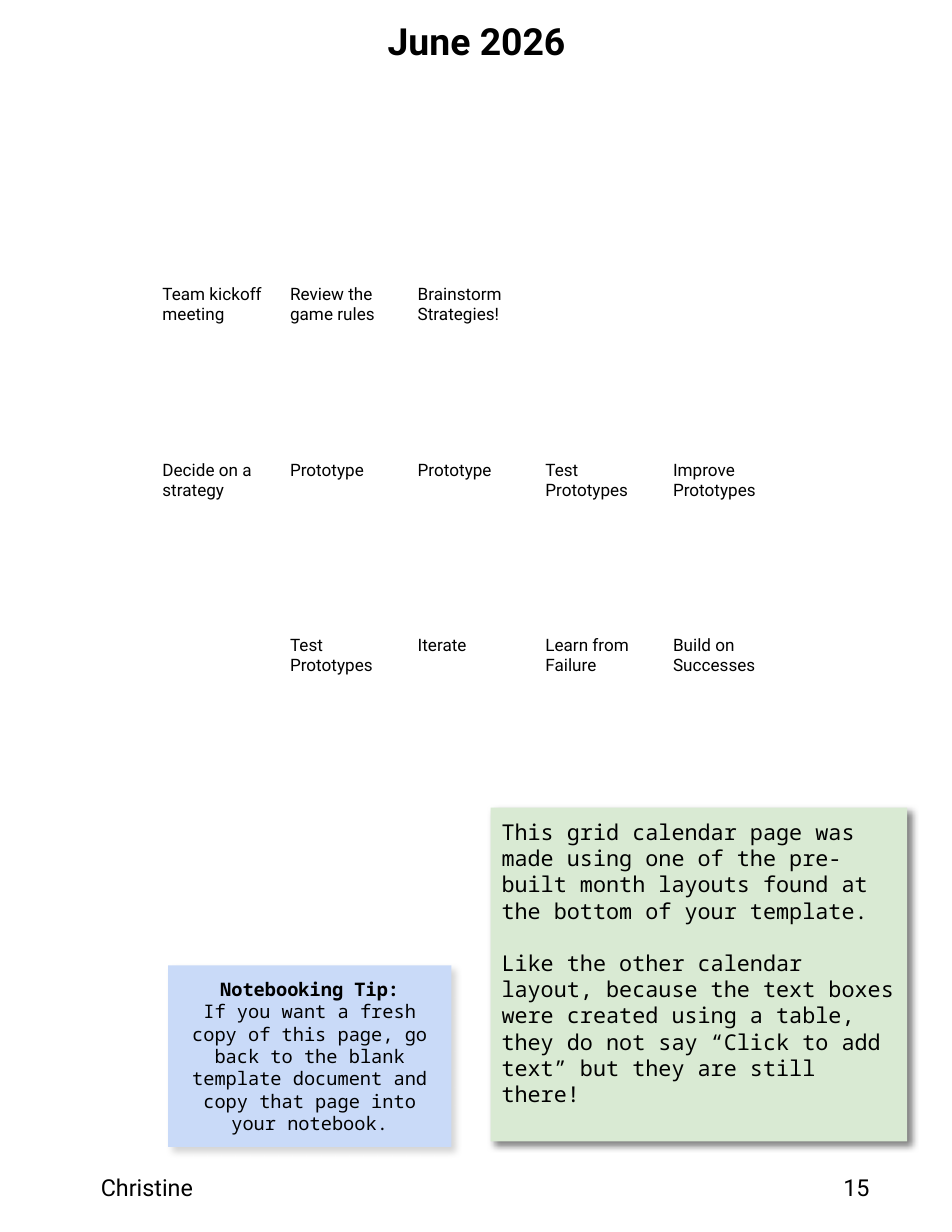
from dataclasses import dataclass
from typing import NamedTuple

from lxml import etree
from pptx import Presentation
from pptx import util as u
from pptx.dml.color import RGBColor
from pptx.enum import shapes, text
from pptx.oxml.ns import qn


@dataclass(frozen=True)
class Theme:
    ink: str = "000000"
    green: str = "D9EAD3"
    blue: str = "C9DAF8"
    sans: str = "Roboto"
    mono: str = "Noto Sans Mono"
    title: float = 24
    footer: float = 15
    entry: float = 11
    note: float = 14
    tip: float = 12


THEME = Theme()
WIDTH, HEIGHT = u.Inches(8.5), u.Inches(11)


class Area(NamedTuple):
    """Percentages of the slide's width and height."""
    left: float
    top: float
    width: float
    height: float

    def lengths(self) -> tuple:
        return (across(self.left), down(self.top),
                across(self.width), down(self.height))


@dataclass(frozen=True)
class Label:
    area: Area
    words: str
    size: float
    bold: bool = False
    align: text.PP_ALIGN = text.PP_ALIGN.LEFT


@dataclass(frozen=True)
class Note:
    area: Area
    lines: tuple
    size: float
    fill: str
    shadow_opacity: int
    gap: float = 0
    bold_heading: bool = False
    align: text.PP_ALIGN = text.PP_ALIGN.LEFT
    anchor: text.MSO_ANCHOR = text.MSO_ANCHOR.TOP


LABELS = (
    Label(Area(3.18, 1.45, 93.76, 4.09), "June 2026", THEME.title, True, text.PP_ALIGN.CENTER),
    Label(Area(10.59, 95.27, 41.29, 2.09), "Christine", THEME.footer),
    Label(Area(88.59, 95.27, 8.71, 2.09), "15", THEME.footer),
)

NOTES = (
    Note(Area(51.53, 65.55, 43.76, 27.09), (
        "This grid calendar page was made using one of the pre-built month layouts "
        "found at the bottom of your template.",
        "Like the other calendar layout, because the text boxes were created using a table, "
        "they do not say “Click to add text” but they are still there!",
    ), THEME.note, THEME.green, 50, gap=17),
    Note(Area(17.65, 78.36, 29.76, 14.73), (
        "Notebooking Tip:",
        "If you want a fresh copy of this page, go back to the blank template document "
        "and copy that page into your notebook.",
    ), THEME.tip, THEME.blue, 17, bold_heading=True,
        align=text.PP_ALIGN.CENTER, anchor=text.MSO_ANCHOR.MIDDLE),
)

CALENDAR = Area(3.06, 7.36, 93.88, 85.26)
DAYS, WEEKS = 7, 5
HEADER_HEIGHT = 13.91
ENTRIES = {
    1: {1: "Team kickoff meeting", 2: "Review the game rules", 3: "Brainstorm Strategies!"},
    2: {1: "Decide on a strategy", 2: "Prototype", 3: "Prototype",
        4: "Test Prototypes", 5: "Improve Prototypes"},
    3: {2: "Test Prototypes", 3: "Iterate", 4: "Learn from Failure", 5: "Build on Successes"},
}


def across(percent: float) -> int:
    return round(WIDTH * percent / 100)


def down(percent: float) -> int:
    return round(HEIGHT * percent / 100)


def style(paragraph, font: str, size: float, bold: bool = False) -> None:
    for run in paragraph.runs:
        run.font.name = font
        run.font.size = u.Pt(size)
        run.font.bold = bold
        run.font.color.rgb = RGBColor.from_string(THEME.ink)


def set_insets(holder, left: float, top: float, right: float, bottom: float) -> None:
    holder.margin_left, holder.margin_top = u.Inches(left), u.Inches(top)
    holder.margin_right, holder.margin_bottom = u.Inches(right), u.Inches(bottom)


def draw_label(slide, label: Label) -> None:
    frame = slide.shapes.add_textbox(*label.area.lengths()).text_frame
    frame.word_wrap = True
    set_insets(frame, 0, 0, 0, 0)
    frame.text = label.words
    frame.paragraphs[0].alignment = label.align
    style(frame.paragraphs[0], THEME.sans, label.size, label.bold)


def draw_calendar(slide) -> None:
    table = slide.shapes.add_table(WEEKS + 1, DAYS, *CALENDAR.lengths()).table
    table.first_row = table.horz_banding = False
    for day in table.columns:
        day.width = across(CALENDAR.width / DAYS)
    for index, week in enumerate(table.rows):
        week.height = down((CALENDAR.height - HEADER_HEIGHT) / WEEKS if index else HEADER_HEIGHT)
    for cell in table.iter_cells():
        cell.fill.background()
    for week, entries in ENTRIES.items():
        for day, words in entries.items():
            cell = table.cell(week, day)
            set_insets(cell, 0.05, 0.2, 0.05, 0.05)
            cell.text = words
            style(cell.text_frame.paragraphs[0], THEME.sans, THEME.entry)


def cast_shadow(shape, opacity: int) -> None:
    shape.shadow.inherit = False
    effects = shape._element.spPr.find(qn("a:effectLst"))
    shadow = etree.SubElement(effects, qn("a:outerShdw"), blurRad=str(u.Pt(4.5)),
                              dist=str(u.Pt(3.8)), dir=str(46 * 60000),
                              algn="bl", rotWithShape="0")
    color = etree.SubElement(shadow, qn("a:srgbClr"), val=THEME.ink)
    etree.SubElement(color, qn("a:alpha"), val=str(opacity * 1000))


def draw_note(slide, note: Note) -> None:
    card = slide.shapes.add_shape(shapes.MSO_SHAPE.RECTANGLE, *note.area.lengths())
    card.fill.solid()
    card.fill.fore_color.rgb = RGBColor.from_string(note.fill)
    card.line.fill.background()
    cast_shadow(card, note.shadow_opacity)
    frame = card.text_frame
    frame.word_wrap = True
    frame.vertical_anchor = note.anchor
    set_insets(frame, 0.1, 0.1, 0.1, 0.1)
    frame.text = "\n".join(note.lines)
    for index, paragraph in enumerate(frame.paragraphs):
        paragraph.alignment = note.align
        if index and note.gap:
            paragraph.space_before = u.Pt(note.gap)
        style(paragraph, THEME.mono, note.size, note.bold_heading and index == 0)


def main() -> None:
    deck = Presentation()
    deck.slide_width, deck.slide_height = WIDTH, HEIGHT
    slide = deck.slides.add_slide(deck.slide_layouts[6])
    for label in LABELS:
        draw_label(slide, label)
    draw_calendar(slide)
    for note in NOTES:
        draw_note(slide, note)
    deck.save("out.pptx")


if __name__ == "__main__":
    main()
